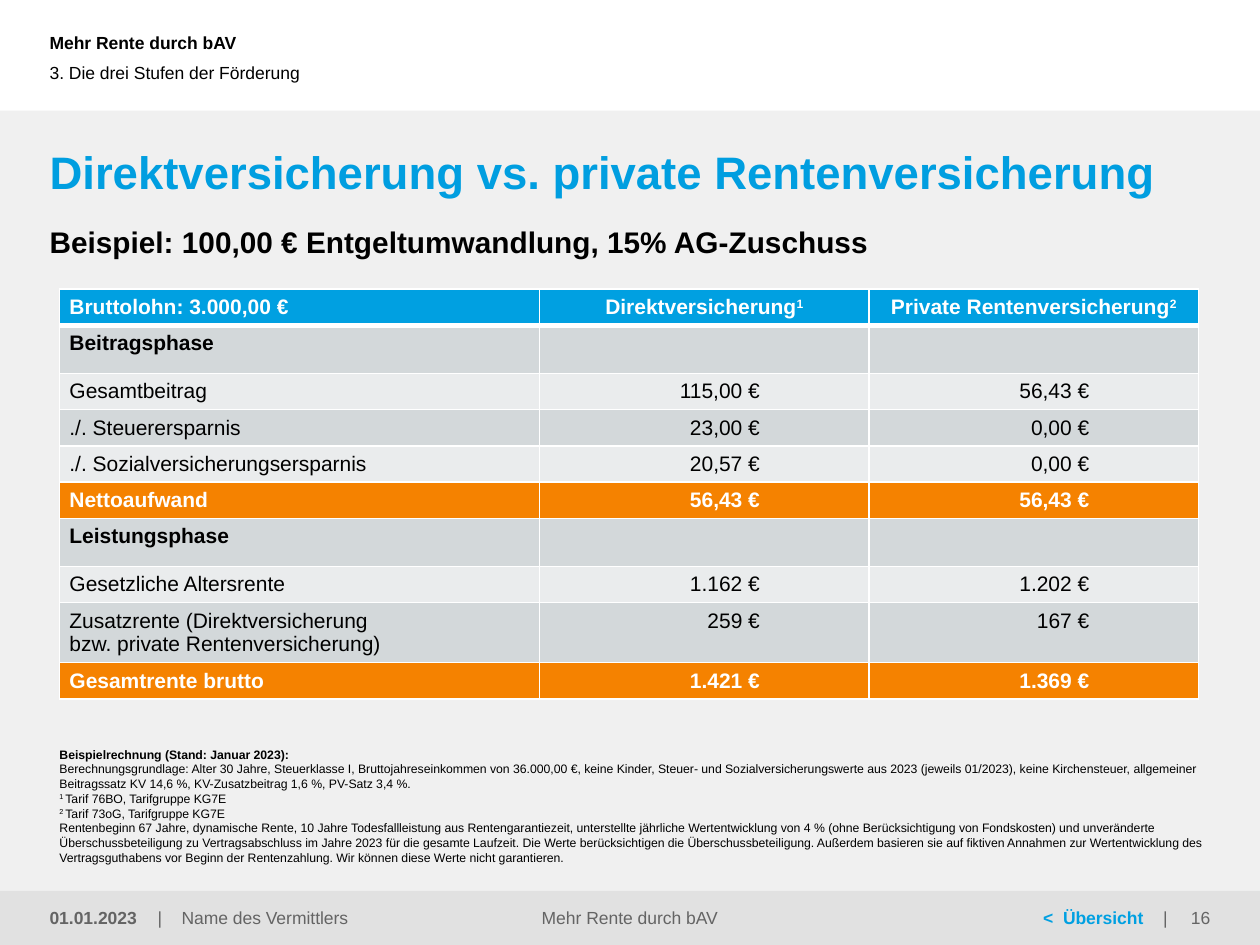
import dataclasses
import typing

import lxml.etree
import pptx
import pptx.dml.color
import pptx.enum.shapes
import pptx.enum.text
import pptx.oxml.ns
import pptx.util

Cm = pptx.util.Cm
Align = pptx.enum.text.PP_ALIGN
Anchor = pptx.enum.text.MSO_ANCHOR
qn = pptx.oxml.ns.qn


@dataclasses.dataclass(frozen=True)
class Theme:
    font: str = "Arial"
    black: str = "000000"
    white: str = "FFFFFF"
    grey: str = "646464"
    title: str = "009EE0"
    accent: str = "00A0E1"
    total: str = "F58200"
    dark_row: str = "D3D8DA"
    light_row: str = "EAECED"
    page: str = "F0F0F0"
    footer: str = "E1E1E1"
    title_size: float = 26
    subtitle_size: float = 17
    table_size: float = 12
    label_size: float = 10
    note_size: float = 7
    border: float = 0.96
    header_border: float = 3


class Box(typing.NamedTuple):
    left: float
    top: float
    width: float
    height: float

    def inside(self, left, top, width, height):
        return Box(self.left + left, self.top + top, width, height)

    def lengths(self):
        return [Cm(value) for value in self]


THEME = Theme()
EDGE = 1.0

TABLE_ROWS = [
    ("header", 0.7, ["Bruttolohn: 3.000,00 €", "Direktversicherung^1", "Private Rentenversicherung^2"]),
    ("section", 0.97, ["Beitragsphase", "", ""]),
    ("light", 0.73, ["Gesamtbeitrag", "115,00 €", "56,43 €"]),
    ("dark", 0.73, ["./. Steuerersparnis", "23,00 €", "0,00 €"]),
    ("light", 0.73, ["./. Sozialversicherungsersparnis", "20,57 €", "0,00 €"]),
    ("total", 0.73, ["Nettoaufwand", "56,43 €", "56,43 €"]),
    ("section", 0.97, ["Leistungsphase", "", ""]),
    ("light", 0.73, ["Gesetzliche Altersrente", "1.162 €", "1.202 €"]),
    ("dark", 1.21, ["Zusatzrente (Direktversicherung\nbzw. private Rentenversicherung)", "259 €", "167 €"]),
    ("total", 0.73, ["Gesamtrente brutto", "1.421 €", "1.369 €"]),
]

ROW_STYLES = {
    "header": (THEME.accent, THEME.white, True),
    "section": (THEME.dark_row, THEME.black, True),
    "light": (THEME.light_row, THEME.black, False),
    "dark": (THEME.dark_row, THEME.black, False),
    "total": (THEME.total, THEME.white, True),
}

NOTES = [
    "Beispielrechnung (Stand: Januar 2023):",
    "Berechnungsgrundlage: Alter 30 Jahre, Steuerklasse I, Bruttojahreseinkommen von 36.000,00 €, keine Kinder, Steuer- und Sozialversicherungswerte aus 2023 (jeweils 01/2023), keine Kirchensteuer, allgemeiner Beitragssatz KV 14,6 %, KV-Zusatzbeitrag 1,6 %, PV-Satz 3,4 %.",
    "^1 ^Tarif 76BO, Tarifgruppe KG7E",
    "^2 ^Tarif 73oG, Tarifgruppe KG7E",
    "Rentenbeginn 67 Jahre, dynamische Rente, 10 Jahre Todesfallleistung aus Rentengarantiezeit, unterstellte jährliche Wertentwicklung von 4 % (ohne Berücksichtigung von Fondskosten) und unveränderte Überschussbeteiligung zu Vertragsabschluss im Jahre 2023 für die gesamte Laufzeit. Die Werte berücksichtigen die Überschussbeteiligung. Außerdem basieren sie auf fiktiven Annahmen zur Wertentwicklung des Vertragsguthabens vor Beginn der Rentenzahlung. Wir können diese Werte nicht garantieren.",
]


def color(value):
    return pptx.dml.color.RGBColor.from_string(value)


def set_font(font, size, text_color, bold=False):
    font.name = THEME.font
    font.size = pptx.util.Pt(size)
    font.bold = bold
    font.color.rgb = color(text_color)


def add_tabs(paragraph, stops):
    tabs = lxml.etree.SubElement(paragraph._p.get_or_add_pPr(), qn("a:tabLst"))
    for stop in stops:
        lxml.etree.SubElement(tabs, qn("a:tab"), pos=str(Cm(stop)), algn="l")


def write(frame, lines, size, text_color, bold=False, align=Align.LEFT, tabs=()):
    for index, line in enumerate(lines):
        paragraph = frame.add_paragraph() if index else frame.paragraphs[0]
        if tabs:
            add_tabs(paragraph, tabs)
        paragraph.alignment = align
        set_font(paragraph.font, size, text_color, bold)
        for position, piece in enumerate(line.split("^")):
            if piece:
                run = paragraph.add_run()
                run.text = piece
                if position % 2:
                    run._r.get_or_add_rPr().set("baseline", "30000")


def prepare_frame(frame, left=0, right=0, anchor=Anchor.MIDDLE):
    frame.word_wrap = True
    frame.auto_size = pptx.enum.text.MSO_AUTO_SIZE.NONE
    frame.vertical_anchor = anchor
    frame.margin_left, frame.margin_right = Cm(left), Cm(right)
    frame.margin_top = frame.margin_bottom = 0
    return frame


def add_frame(slide, box, **options):
    return prepare_frame(slide.shapes.add_textbox(*box.lengths()).text_frame, **options)


def use_placeholder(slide, index, box, **options):
    shape = slide.placeholders[index]
    slide.shapes._spTree.append(shape._element)
    shape.left, shape.top, shape.width, shape.height = box.lengths()
    return prepare_frame(shape.text_frame, **options)


def add_band(slide, box, fill):
    shape = slide.shapes.add_shape(pptx.enum.shapes.MSO_SHAPE.RECTANGLE, *box.lengths())
    shape.shadow.inherit = False
    shape.fill.solid()
    shape.fill.fore_color.rgb = color(fill)
    shape.line.fill.background()


def add_header(slide, box):
    write(add_frame(slide, box.inside(0, 0, 17.73, 1.7), left=EDGE),
          ["Mehr Rente durch bAV"], THEME.label_size, THEME.black, bold=True)
    frame = use_placeholder(slide, 1, box.inside(0, 0.66, 18.16, 1.6), left=EDGE)
    paragraph = frame.paragraphs[0]
    properties = paragraph._p.get_or_add_pPr()
    properties.set("marL", "0")
    properties.set("indent", "0")
    lxml.etree.SubElement(properties, qn("a:buNone"))
    paragraph.space_before = 0
    write(frame, ["3. Die drei Stufen der Förderung"], THEME.label_size, THEME.black)


def add_headings(slide, box):
    title = use_placeholder(slide, 0, box.inside(0, 0, box.width, 1.4), anchor=Anchor.TOP)
    write(title, ["Direktversicherung vs. private Rentenversicherung"],
          THEME.title_size, THEME.title, bold=True)
    write(add_frame(slide, box.inside(0, 1.62, box.width, 0.71), anchor=Anchor.TOP),
          ["Beispiel: 100,00 € Entgeltumwandlung, 15% AG-Zuschuss"],
          THEME.subtitle_size, THEME.black, bold=True)


def add_borders(cell, top, bottom):
    properties = cell._tc.get_or_add_tcPr()
    widths = {"a:lnL": THEME.border, "a:lnR": THEME.border, "a:lnT": top, "a:lnB": bottom}
    for position, (tag, width) in enumerate(widths.items()):
        line = lxml.etree.Element(qn(tag), w=str(pptx.util.Pt(width)))
        fill = lxml.etree.SubElement(line, qn("a:solidFill"))
        lxml.etree.SubElement(fill, qn("a:srgbClr"), val=THEME.white)
        properties.insert(position, line)


def add_comparison(slide, box):
    table = slide.shapes.add_table(len(TABLE_ROWS), 3, *box.lengths()).table
    table.horz_banding = False
    label_width = 9.68
    value_width = (box.width - label_width) / 2
    for column, width in zip(table.columns, (label_width, value_width, value_width)):
        column.width = Cm(width)
    for row, (kind, height, texts) in enumerate(TABLE_ROWS):
        table.rows[row].height = Cm(height)
        fill, text_color, bold = ROW_STYLES[kind]
        for column, text in enumerate(texts):
            cell = table.cell(row, column)
            cell.fill.solid()
            cell.fill.fore_color.rgb = color(fill)
            add_borders(cell, THEME.header_border if row == 1 else THEME.border,
                        THEME.header_border if row == 0 else THEME.border)
            is_value = column > 0 and kind != "header"
            cell.margin_left = Cm(0.2)
            cell.margin_right = Cm(2.2 if is_value else 0.2)
            align = Align.RIGHT if is_value else Align.CENTER if column else Align.LEFT
            write(cell.text_frame, text.split("\n"), THEME.table_size, text_color, bold, align)


def add_notes(slide, box):
    frame = add_frame(slide, box, anchor=Anchor.TOP)
    write(frame, NOTES, THEME.note_size, THEME.black)
    frame.paragraphs[0].font.bold = True


def add_footer(slide, box):
    add_band(slide, box, THEME.footer)
    size, grey, height = THEME.label_size, THEME.grey, box.height
    write(add_frame(slide, box.inside(0, 0, 3.1, height), left=EDGE), ["01.01.2023"], size, grey, bold=True)
    write(add_frame(slide, box.inside(3.18, 0, 6.15, height)), ["|\tName des Vermittlers"], size, grey, tabs=[0.48])
    write(add_frame(slide, box.inside(7.45, 0, 10.49, height)), ["Mehr Rente durch bAV"], size, grey, align=Align.CENTER)
    navigation = add_frame(slide, box.inside(17.48, 0, 6.15, height), left=3.55)
    write(navigation, ["<\tÜbersicht"], size, THEME.accent, bold=True, tabs=[0.4, 2.42])
    separator = navigation.paragraphs[0].add_run()
    separator.text = "\t|"
    set_font(separator.font, size, grey)
    write(add_frame(slide, box.inside(23.01, 0, 2.39, height), right=EDGE), ["16"], size, grey, align=Align.RIGHT)


def main():
    presentation = pptx.Presentation()
    presentation.slide_width, presentation.slide_height = Cm(25.4), Cm(19.05)
    slide = presentation.slides.add_slide(presentation.slide_layouts[1])
    add_band(slide, Box(0, 2.23, 25.4, 16.82), THEME.page)
    add_header(slide, Box(0, 0, 25.4, 2.23))
    add_headings(slide, Box(EDGE, 2.9, 23.41, 2.33))
    add_comparison(slide, Box(1.2, 5.83, 22.96, 8.23))
    add_notes(slide, Box(1.2, 15.06, 23.29, 2.36))
    add_footer(slide, Box(0, 17.96, 25.4, 1.09))
    presentation.save("out.pptx")


if __name__ == "__main__":
    main()
